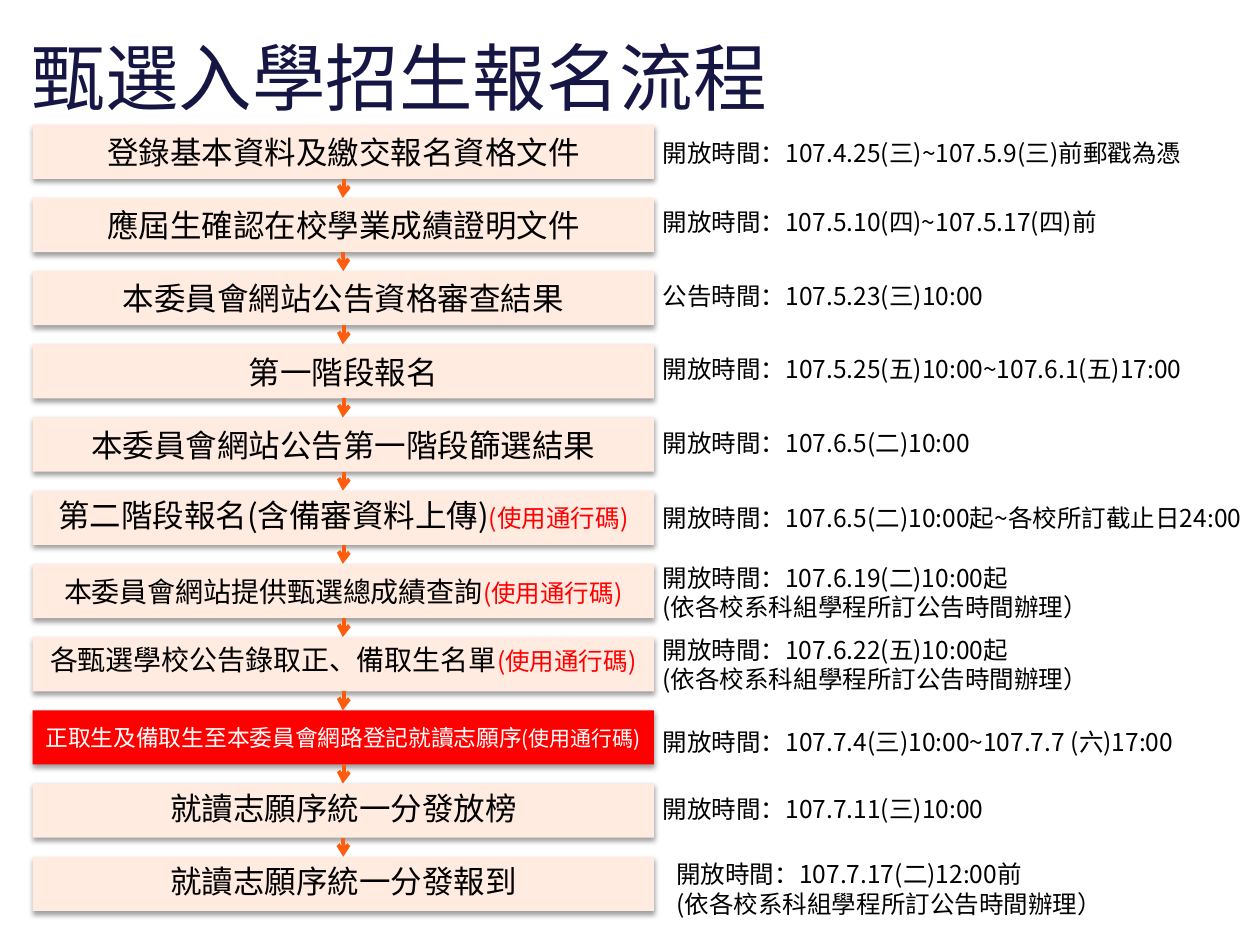
from typing import NamedTuple

from lxml.etree import SubElement
from pptx import Presentation
from pptx.dml.color import RGBColor
from pptx.enum.shapes import MSO_CONNECTOR as Link, MSO_SHAPE as Shape
from pptx.enum.text import MSO_ANCHOR as Anchor, MSO_AUTO_SIZE as Fit, PP_ALIGN as Align
from pptx.oxml.ns import qn
from pptx.util import Inches, Pt

FONT = "Noto Sans CJK SC"
HEX = {"peach": "FFEBE0", "red": "FF0000", "white": "FFFFFF",
       "black": "000000", "arrow": "FF5D0D", "navy": "161645"}

# Column and row grid of the flow, in inches
LEFT, WIDE = 0.26, 4.93
TOP, PITCH, HIGH = 0.99, 0.581, 0.43
MID = LEFT + WIDE / 2
NOTE = 5.16
CODE = "(使用通行碼)"
RULE = "(依各校系科組學程所訂公告時間辦理）"


class Step(NamedTuple):
    text: str
    note: str
    drop: float  # note top below the top of its row
    wide: float  # note width
    size: int = 18
    code: int = 0  # size of the pass code remark, 0 for none
    high: bool = False  # text at the top of the box
    hot: bool = False
    shift: float = 0
    align: Align = Align.LEFT
    bent: bool = True  # shape of the arrow to the next step


STEPS = [
    Step("登錄基本資料及繳交報名資格文件",
         "開放時間：107.4.25(三)~107.5.9(三)前郵戳為憑", 0.06, 4.52, align=Align.JUSTIFY),
    Step("應屆生確認在校學業成績證明文件",
         "開放時間：107.5.10(四)~107.5.17(四)前", 0.02, 3.83, align=Align.JUSTIFY, bent=False),
    Step("本委員會網站公告資格審查結果", "公告時間：107.5.23(三)10:00", 0.03, 2.85),
    Step("第一階段報名", "開放時間：107.5.25(五)10:00~107.6.1(五)17:00", 0.03, 4.52),
    Step("本委員會網站公告第一階段篩選結果", "開放時間：107.6.5(二)10:00", 0.03, 2.75),
    Step("第二階段報名(含備審資料上傳)",
         "開放時間：107.6.5(二)10:00起~各校所訂截止日24:00", 0.05, 4.91, code=14, high=True),
    Step("本委員會網站提供甄選總成績查詢",
         f"開放時間：107.6.19(二)10:00起\n{RULE}", -0.06, 4.76, size=16, code=14),
    Step("各甄選學校公告錄取正、備取生名單",
         f"開放時間：107.6.22(五)10:00起\n{RULE}", -0.07, 4.76, size=16, code=14, high=True),
    Step("正取生及備取生至本委員會網路登記就讀志願序",
         "開放時間：107.7.4(三)10:00~107.7.7 (六)17:00", 0.08, 4.52, size=13, code=12, hot=True),
    Step("就讀志願序統一分發放榜", "開放時間：107.7.11(三)10:00", 0.03, 2.85,
         high=True, bent=False),
    Step("就讀志願序統一分發報到",
         f"開放時間：107.7.17(二)12:00前\n{RULE}", -0.03, 3.6, high=True, shift=0.11),
]


def color(name: str) -> RGBColor:
    return RGBColor.from_string(HEX[name])


def style(run, size: int, name: str) -> None:
    """Set Latin and East Asian font, size and colour of a run."""
    run.font.name = FONT
    run.font.size = Pt(size)
    run.font.color.rgb = color(name)
    SubElement(run.font._element, qn("a:ea"), typeface=FONT)


def shade(box) -> None:
    """Give the box a soft shadow straight below."""
    box.shadow.inherit = False
    fx = box._element.spPr.find(qn("a:effectLst"))
    drop = SubElement(fx, qn("a:outerShdw"), blurRad=str(Pt(3.1)), dist=str(Pt(1.6)),
                      dir="5400000", rotWithShape="0")
    tint = SubElement(drop, qn("a:srgbClr"), val=HEX["black"])
    SubElement(tint, qn("a:alpha"), val="38000")


def add_box(slide, step: Step, top: float) -> None:
    box = slide.shapes.add_shape(Shape.RECTANGLE, Inches(LEFT), Inches(top),
                                 Inches(WIDE), Inches(HIGH))
    box.fill.solid()
    box.fill.fore_color.rgb = color("red" if step.hot else "peach")
    box.line.fill.background()
    shade(box)
    frame = box.text_frame
    frame.word_wrap = True
    frame.vertical_anchor = Anchor.TOP if step.high else Anchor.MIDDLE
    frame.margin_left = frame.margin_right = Inches(0.04)
    frame.margin_top = frame.margin_bottom = Inches(0.04)
    frame.text = step.text
    para = frame.paragraphs[0]
    para.alignment = Align.CENTER
    style(para.runs[0], step.size, "white" if step.hot else "black")
    if step.code:
        run = para.add_run()
        run.text = CODE
        style(run, step.code, "white" if step.hot else "red")


def add_note(slide, step: Step, top: float) -> None:
    lines = step.note.count("\n") + 1
    box = slide.shapes.add_textbox(Inches(NOTE + step.shift), Inches(top + step.drop),
                                   Inches(step.wide), Inches(0.11 + 0.23 * lines))
    frame = box.text_frame
    frame.word_wrap = True
    frame.auto_size = Fit.SHAPE_TO_FIT_TEXT
    frame.text = step.note
    for para in frame.paragraphs:
        para.alignment = step.align
        style(para.runs[0], 14, "black")


def add_arrow(slide, top: float, bent: bool) -> None:
    """Draw an arrow across the gap below a box; a bent one is a turned elbow."""
    gap = PITCH - HIGH
    if bent:
        mid = top + gap / 2
        kind, ends = Link.ELBOW, (MID - gap / 2, mid - 0.005, MID + gap / 2, mid + 0.005)
    else:
        kind, ends = Link.STRAIGHT, (MID, top, MID, top + gap)
    arrow = slide.shapes.add_connector(kind, *map(Inches, ends))
    arrow.line.color.rgb = color("arrow")
    arrow.line.width = Pt(2.25)
    SubElement(arrow.line._get_or_add_ln(), qn("a:tailEnd"), type="arrow")
    props = arrow._element.spPr
    SubElement(props, qn("a:effectLst"))
    if bent:
        props.find(qn("a:xfrm")).set("rot", "5400000")


def add_title(slide, text: str) -> None:
    title = slide.shapes.title
    title.left, title.top = Inches(0.15), Inches(0.29)
    title.width, title.height = Inches(9.5), Inches(0.62)
    frame = title.text_frame
    frame.text = text
    frame.word_wrap = True
    frame.auto_size = Fit.NONE
    frame.vertical_anchor = Anchor.MIDDLE
    para = frame.paragraphs[0]
    para.alignment = Align.LEFT
    style(para.runs[0], 42, "navy")


def main() -> None:
    deck = Presentation()
    deck.slide_width, deck.slide_height = Inches(10), Inches(7.5)
    slide = deck.slides.add_slide(deck.slide_layouts[5])
    add_title(slide, "甄選入學招生報名流程")
    for row, step in enumerate(STEPS):
        top = TOP + row * PITCH
        add_box(slide, step, top)
        add_note(slide, step, top)
        if row < len(STEPS) - 1:
            add_arrow(slide, top + HIGH, step.bent)
    deck.save("out.pptx")


if __name__ == "__main__":
    main()
